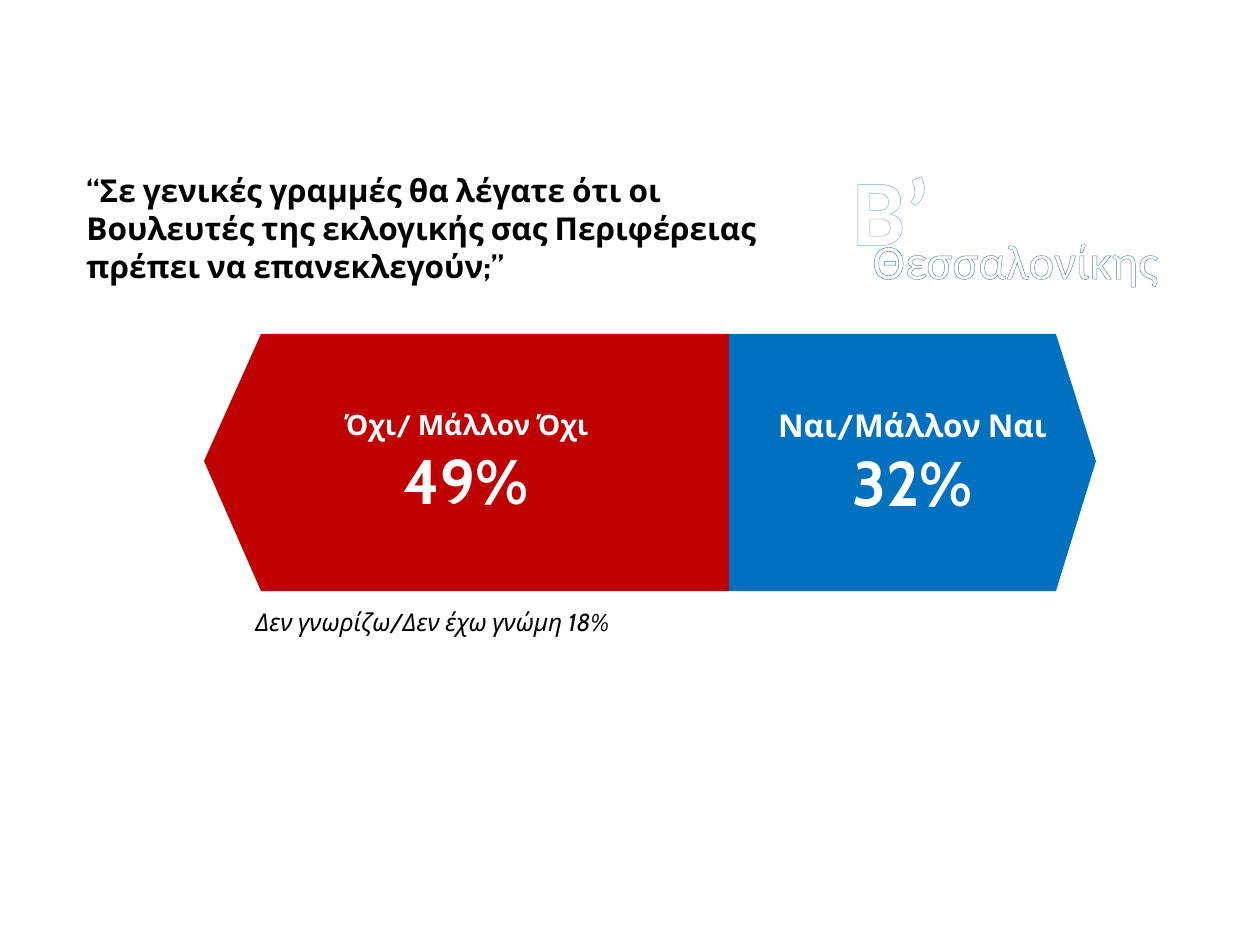
from dataclasses import dataclass

from lxml.etree import SubElement
from pptx import Presentation
from pptx.dml.color import RGBColor as RGB
from pptx.enum.text import MSO_ANCHOR as Anchor, MSO_AUTO_SIZE as AutoSize, PP_ALIGN as Align
from pptx.oxml.ns import qn
from pptx.util import Emu, Pt

EMU_PER_PX = 914400 / 126


@dataclass(frozen=True)
class Theme:
    body_font: str = "Cabin"
    region_font: str = "Calibri"
    black: str = "000000"
    white: str = "FFFFFF"
    no_fill: str = "C00000"
    yes_fill: str = "0070C0"
    letter_outline: str = "7EA6EA"
    name_outline: str = "4F81BD"
    note: int = 14
    small_label: int = 16
    label: int = 18
    name: int = 28
    percent: int = 36
    letter: int = 54


THEME = Theme()


def px(value):
    return Emu(round(value * EMU_PER_PX))


def format_span(span, size, color, font=THEME.body_font, bold=False, italic=False):
    span.font.name = font
    span.font.size = Pt(size)
    span.font.bold = bold
    span.font.italic = italic
    span.font.color.rgb = RGB.from_string(color)


def add_text(page, box, text, size, color=THEME.black, wrap=False, align=Align.LEFT, **style):
    """Add a one-paragraph text box and return its run."""
    frame = page.shapes.add_textbox(*map(px, box)).text_frame
    frame.text = text
    frame.word_wrap = wrap
    frame.auto_size = AutoSize.SHAPE_TO_FIT_TEXT
    para = frame.paragraphs[0]
    para.alignment = align
    span = para.runs[0]
    format_span(span, size, color, **style)
    return span


def add_outlined_text(page, box, text, size, outline, width, bold=False):
    """Add white text with a coloured contour."""
    span = add_text(page, box, text, size, THEME.white, align=Align.CENTER,
                    font=THEME.region_font, bold=bold)
    properties = span.font._element
    line = SubElement(properties, qn("a:ln"), w=str(Pt(width)))
    fill = SubElement(line, qn("a:solidFill"))
    SubElement(fill, qn("a:srgbClr"), val=outline)
    properties.insert(0, line)  # the outline precedes the fill


def add_answer(page, split, shoulder, tip, fill, label, label_size, percent):
    """Add a bar that starts at the split and points at its tip."""
    top, middle, bottom = 334, 461, 591
    points = [(shoulder, bottom), (split, bottom), (split, top), (shoulder, top), (tip, middle)]
    start, *others = [(px(x), px(y)) for x, y in points]
    builder = page.shapes.build_freeform(*start)
    builder.add_line_segments(others, close=True)
    bar = builder.convert_to_shape()
    bar.shadow.inherit = False
    bar.fill.solid()
    bar.fill.fore_color.rgb = RGB.from_string(fill)
    bar.line.fill.background()

    frame = bar.text_frame
    frame.text = f"{label}\n{percent}"
    frame.word_wrap = False
    frame.vertical_anchor = Anchor.MIDDLE
    for para, size in zip(frame.paragraphs, (label_size, THEME.percent)):
        para.alignment = Align.CENTER
        format_span(para.runs[0], size, THEME.white, bold=True)


def main():
    deck = Presentation()
    deck.slide_width, deck.slide_height = px(1260), px(945)
    page = deck.slides.add_slide(deck.slide_layouts[6])

    # Question
    add_text(page, (74, 165, 774, 127),
             "“Σε γενικές γραμμές θα λέγατε ότι οι Βουλευτές της εκλογικής σας "
             "Περιφέρειας πρέπει να επανεκλεγούν;”",
             THEME.label, wrap=True, bold=True)

    # Opposing answers, meeting at one split
    split = 729
    add_answer(page, split, 261, 204, THEME.no_fill,
               "Όχι/ Μάλλον Όχι", THEME.small_label, "49%")
    add_answer(page, split, 1056, 1096, THEME.yes_fill,
               "Ναι/Μάλλον Ναι", THEME.label, "32%")

    # Undecided
    add_text(page, (243, 601, 396, 43), "Δεν γνωρίζω/Δεν έχω γνώμη 18%",
             THEME.note, italic=True)

    # Constituency
    add_outlined_text(page, (838, 145, 106, 127), "B’", THEME.letter,
                      THEME.letter_outline, 2.48, bold=True)
    add_outlined_text(page, (858, 224, 315, 72), "Θεσσαλονίκης", THEME.name,
                      THEME.name_outline, 0.8)

    deck.save("out.pptx")


if __name__ == "__main__":
    main()
